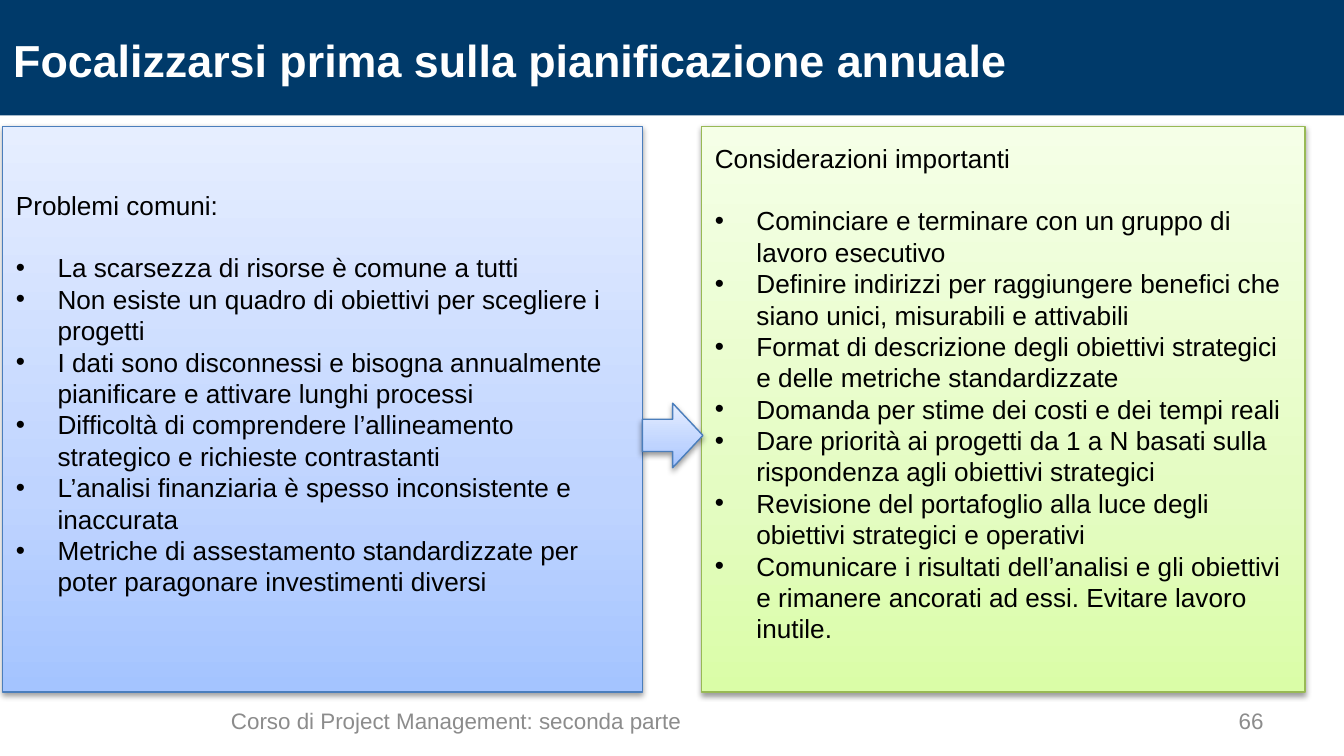
from lxml import etree
from pptx import Presentation
from pptx.dml.color import RGBColor
from pptx.enum import shapes, text
from pptx.oxml import ns
from pptx.util import Inches, Pt

BLUE = [(0, "A4C4FF"), (35, "BFD4FF"), (100, "E6EEFF")], "4B7EBC"
GREEN = [(0, "DAFDA7"), (35, "E4FCC2"), (100, "F5FFE7")], "98B955"
LINE = 16.8
PROBLEMS = [
    "La scarsezza di risorse è comune a tutti",
    "Non esiste un quadro di obiettivi per scegliere i progetti",
    "I dati sono disconnessi e bisogna annualmente pianificare e attivare lunghi processi",
    "Difficoltà di comprendere l’allineamento strategico e richieste contrastanti",
    "L’analisi finanziaria è spesso inconsistente e inaccurata",
    "Metriche di assestamento standardizzate per poter paragonare investimenti diversi",
]
CONSIDERATIONS = [
    "Cominciare e terminare con un gruppo di lavoro esecutivo",
    "Definire indirizzi per raggiungere benefici che siano unici, misurabili e attivabili",
    "Format di descrizione degli obiettivi strategici e delle metriche standardizzate",
    "Domanda per stime dei costi e dei tempi reali",
    "Dare priorità ai progetti da 1 a N basati sulla rispondenza agli obiettivi strategici",
    "Revisione del portafoglio alla luce degli obiettivi strategici e operativi",
    "Comunicare i risultati dell’analisi e gli obiettivi e rimanere ancorati ad essi. "
    "Evitare lavoro inutile.",
]


def rgb(value):
    """Turn a hex string into a colour."""
    return RGBColor.from_string(value)


def sub(parent, tag, **attrs):
    """Append a DrawingML child element."""
    return etree.SubElement(parent, ns.qn(tag), {k: str(v) for k, v in attrs.items()})


def write(p, content, size=14, color="000000", bold=False, align=text.PP_ALIGN.LEFT,
          bullet=False, line=None, after=0):
    """Write one formatted paragraph."""
    if bullet:
        pPr = p._p.get_or_add_pPr()
        pPr.set("marL", str(Inches(0.31)))
        pPr.set("indent", str(-Inches(0.31)))
        sub(pPr, "a:buFont", typeface="Arial")
        sub(pPr, "a:buChar", char="•")
    p.alignment = align
    p.space_after = Pt(after)
    if line:
        p.line_spacing = Pt(line)
    r = p.add_run()
    r.text = content
    r.font.name, r.font.size, r.font.bold = "Arial", Pt(size), bold
    r.font.color.rgb = rgb(color)


def add_label(s, box, content, **fmt):
    """Add a one-line text box."""
    tf = s.shapes.add_textbox(*map(Inches, box)).text_frame
    tf.word_wrap = True
    tf.vertical_anchor = text.MSO_ANCHOR.MIDDLE
    write(tf.paragraphs[0], content, **fmt)


def add_glossy(s, kind, box, theme):
    """Add a shape with a vertical gradient, thin outline and soft shadow."""
    stops, outline = theme
    sp = s.shapes.add_shape(kind, *map(Inches, box))
    sp.fill.gradient()
    sp.fill.gradient_angle = 90
    stop_list = sp._element.spPr.find(".//" + ns.qn("a:gsLst"))
    for old in list(stop_list):
        stop_list.remove(old)
    for pos, color in stops:
        sub(sub(stop_list, "a:gs", pos=pos * 1000), "a:srgbClr", val=color)
    sp.line.color.rgb = rgb(outline)
    sp.line.width = Pt(0.75)
    sp.shadow.inherit = False
    effects = sp._element.spPr.find(ns.qn("a:effectLst"))
    shadow = sub(effects, "a:outerShdw", blurRad=Pt(3.1), dist=Pt(1.6), dir=90 * 60000,
                 rotWithShape=0)
    sub(sub(shadow, "a:srgbClr", val="000000"), "a:alpha", val=38000)
    return sp


def add_header(s, box, title):
    """Add the title band."""
    x, y, w, h = box
    sp = s.shapes.add_shape(shapes.MSO_SHAPE.RECTANGLE, *map(Inches, box))
    sp.fill.solid()
    sp.fill.fore_color.rgb = rgb("003A6A")
    sp.line.fill.background()
    sp.shadow.inherit = False
    add_label(s, (x, y + 0.19, w - 0.11, h - 0.36), title, size=24, color="FFFFFF", bold=True)


def add_panel(s, box, theme, heading, items):
    """Add a panel with a heading and a bullet list."""
    tf = add_glossy(s, shapes.MSO_SHAPE.RECTANGLE, box, theme).text_frame
    tf.word_wrap = True
    tf.vertical_anchor = text.MSO_ANCHOR.MIDDLE
    tf.margin_bottom = Inches(0.29)
    write(tf.paragraphs[0], heading, line=LINE, after=LINE)
    for item in items:
        write(tf.add_paragraph(), item, bullet=True, line=LINE)


def add_footer(s, box, course, number):
    """Add the course name and the page number."""
    x, y, w, h = box
    add_label(s, (x, y, w - 0.66, h), course, size=12, color="8C8C8C")
    add_label(s, (x + w - 0.6, y, 0.6, h), number, size=12, color="8C8C8C",
              align=text.PP_ALIGN.RIGHT)


def main():
    """Build and save the slide."""
    prs = Presentation()
    prs.slide_width, prs.slide_height = Inches(10), Inches(10 * 9 / 16)
    s = prs.slides.add_slide(prs.slide_layouts[6])
    add_header(s, (0, 0, 10, 0.86), "Focalizzarsi prima sulla pianificazione annuale")
    add_panel(s, (0.02, 0.94, 4.76, 4.21), BLUE, "Problemi comuni:", PROBLEMS)
    add_panel(s, (5.22, 0.94, 4.49, 4.21), GREEN, "Considerazioni importanti", CONSIDERATIONS)
    add_glossy(s, shapes.MSO_SHAPE.RIGHT_ARROW, (4.78, 3, 0.45, 0.48), BLUE)
    add_footer(s, (1.62, 5.21, 7.88, 0.3), "Corso di Project Management: seconda parte", "66")
    prs.save("out.pptx")


if __name__ == "__main__":
    main()
